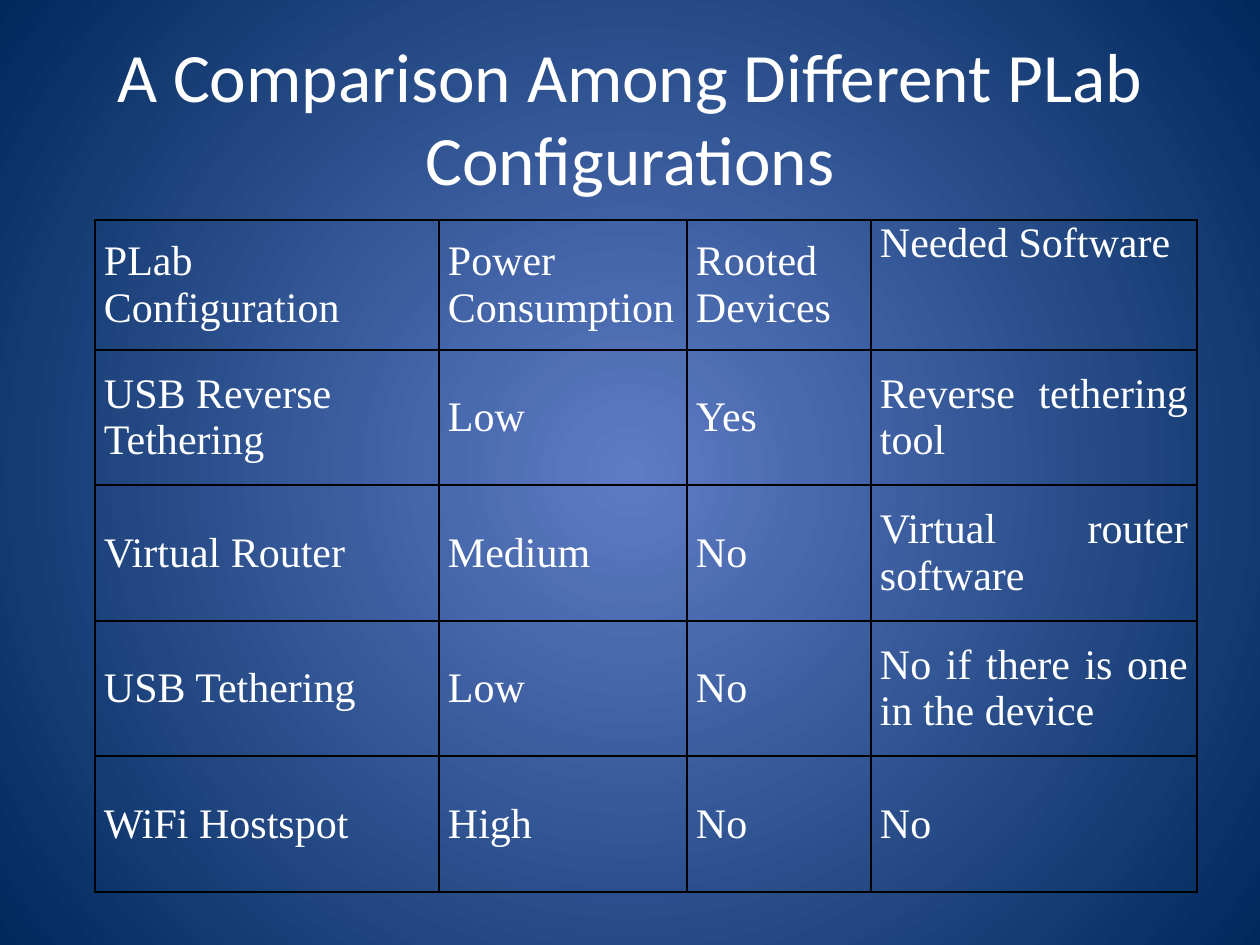
from lxml.etree import SubElement
from pptx import Presentation
from pptx.dml.color import RGBColor
from pptx.enum.text import MSO_ANCHOR, PP_ALIGN
from pptx.oxml.ns import qn
from pptx.util import Pt

PX = 914400 // 126
COLORS = {"text": "FFFFFF", "line": "000000", "glow": "5E7CC5", "edge": "00295C"}
COLS = [344, 248, 184, 326]
ROWS = [130, 135, 136, 135, 136]
DATA = [
    ["PLab Configuration", "Power Consumption", "Rooted Devices", "Needed Software"],
    ["USB Reverse Tethering", "Low", "Yes", "Reverse tethering tool"],
    ["Virtual Router", "Medium", "No", "Virtual router software"],
    ["USB Tethering", "Low", "No", "No if there is one in the device"],
    ["WiFi Hostspot", "High", "No", "No"],
]


def write(frame, text, size=24, font="Times New Roman", align=PP_ALIGN.JUSTIFY):
    para = frame.paragraphs[0]
    para.alignment = align
    run = para.add_run()
    run.text = text
    run.font.size = Pt(size)
    run.font.name = font
    run.font.color.rgb = RGBColor.from_string(COLORS["text"])


def border(cell):
    props = cell._tc.get_or_add_tcPr()
    for i, side in enumerate(("a:lnL", "a:lnR", "a:lnT", "a:lnB")):
        line = props.makeelement(qn(side), {"w": str(Pt(1))})
        fill = SubElement(line, qn("a:solidFill"))
        SubElement(fill, qn("a:srgbClr"), val=COLORS["line"])
        props.insert(i, line)


deck = Presentation()
deck.slide_width, deck.slide_height = 1260 * PX, 945 * PX
slide = deck.slides.add_slide(deck.slide_layouts[5])

back = slide.background.fill
back.gradient()
for stop, name, place in zip(back.gradient_stops, ("glow", "edge"), (0, 1)):
    stop.color.rgb = RGBColor.from_string(COLORS[name])
    stop.position = place
grad = slide.element.find(".//" + qn("a:gradFill"))
grad.remove(grad.find(qn("a:lin")))
ring = SubElement(grad, qn("a:path"), {"path": "circle"})
SubElement(ring, qn("a:fillToRect"), {side: "50000" for side in "ltrb"})

title = slide.shapes.title
title.left, title.top, title.width, title.height = [n * PX for n in (63, 38, 1134, 157)]
title.text_frame.vertical_anchor = MSO_ANCHOR.MIDDLE
write(title.text_frame, "A Comparison Among Different PLab Configurations",
      size=39.6, font="Calibri", align=PP_ALIGN.CENTER)

table = slide.shapes.add_table(len(ROWS), len(COLS), 95 * PX, 220 * PX,
                               sum(COLS) * PX, sum(ROWS) * PX).table
table.first_row = table.horz_banding = False
for col, width in zip(table.columns, COLS):
    col.width = width * PX
for row, height in zip(table.rows, ROWS):
    row.height = height * PX

for r, line in enumerate(DATA):
    for c, text in enumerate(line):
        cell = table.cell(r, c)
        cell.fill.background()
        cell.margin_left = cell.margin_right = 9 * PX
        cell.margin_top = cell.margin_bottom = 0
        head = r == 0
        cell.vertical_anchor = MSO_ANCHOR.TOP if head and c == 3 else MSO_ANCHOR.MIDDLE
        left = head or (r, c) == (1, 0)
        write(cell.text_frame, text, align=PP_ALIGN.LEFT if left else PP_ALIGN.JUSTIFY)
        border(cell)

deck.save("out.pptx")
